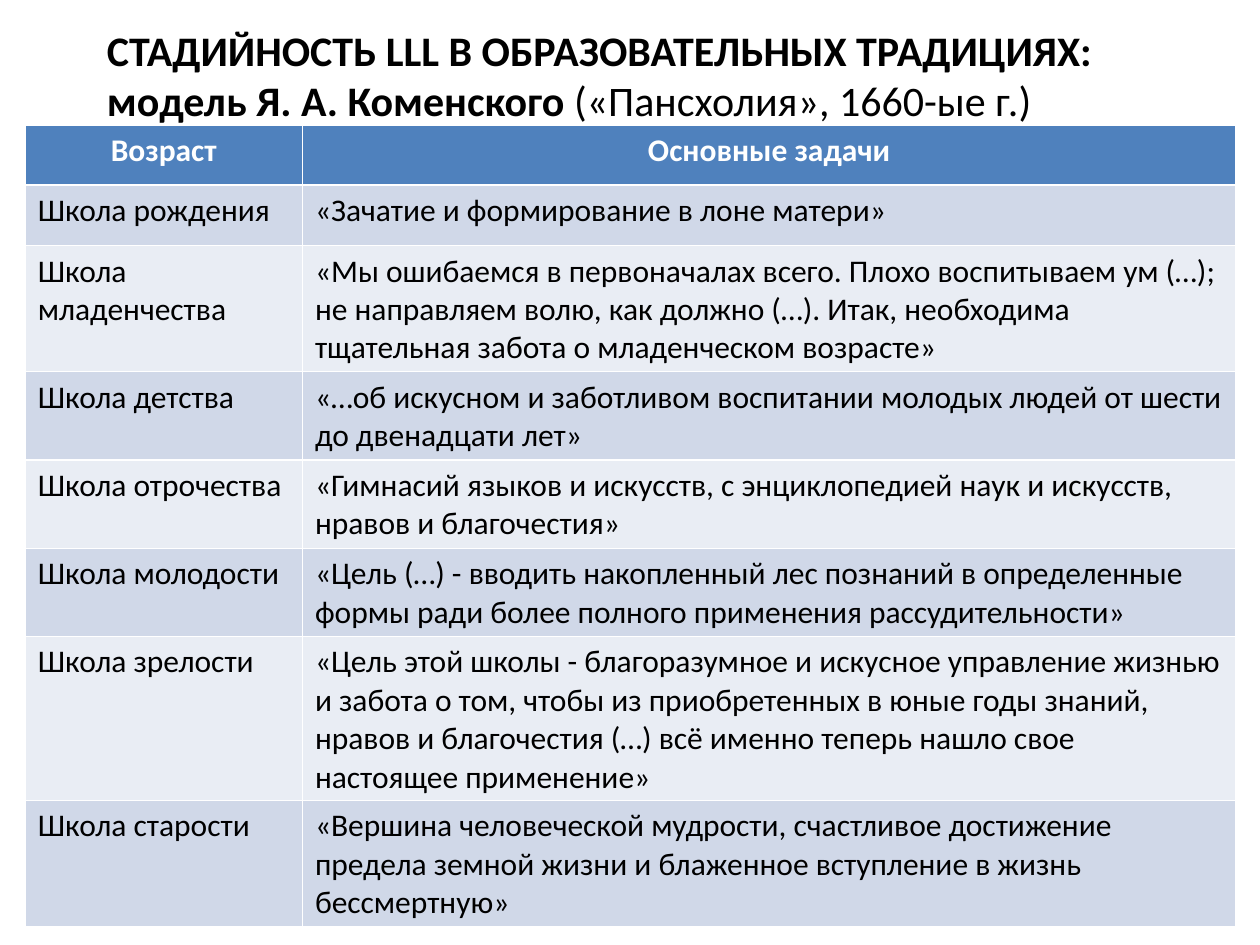
import pptx
import pptx.util
import pptx.dml.color
import pptx.enum.text

Inches = pptx.util.Inches
COLORS = {"text": "000000", "head_text": "FFFFFF", "head": "4F81BD",
          "odd": "D0D8E8", "even": "E9EDF4"}
TITLE = [
    ("СТАДИЙНОСТЬ LLL В ОБРАЗОВАТЕЛЬНЫХ ТРАДИЦИЯХ: модель Я. А. Коменского ", True),
    ("(«Пансхолия», 1660-ые г.)", False),
]
STAGES = [
    ("Возраст", "Основные задачи"),
    ("Школа рождения", "«Зачатие и формирование в лоне матери»"),
    ("Школа младенчества",
     "«Мы ошибаемся в первоначалах всего. Плохо воспитываем ум (…); не направляем волю, "
     "как должно (…). Итак, необходима тщательная забота о младенческом возрасте»"),
    ("Школа детства",
     "«…об искусном и заботливом воспитании молодых людей от шести до двенадцати лет»"),
    ("Школа отрочества",
     "«Гимнасий языков и искусств, с энциклопедией наук и искусств, нравов и благочестия»"),
    ("Школа молодости",
     "«Цель (…) - вводить накопленный лес познаний в определенные формы ради более "
     "полного применения рассудительности»"),
    ("Школа зрелости",
     "«Цель этой школы - благоразумное и искусное управление жизнью и забота о том, чтобы "
     "из приобретенных в юные годы знаний, нравов и благочестия (…) всё именно теперь "
     "нашло свое настоящее применение»"),
    ("Школа старости",
     "«Вершина человеческой мудрости, счастливое достижение предела земной жизни и "
     "блаженное вступление в жизнь бессмертную»"),
]


def rgb(name):
    """Return the named colour as an RGBColor."""
    return pptx.dml.color.RGBColor.from_string(COLORS[name])


def add_run(p, text, size, bold, color):
    """Append a formatted run to a paragraph."""
    r = p.add_run()
    r.text = text
    fmt = {"name": "Calibri", "size": pptx.util.Pt(size), "bold": bold}
    for key, value in fmt.items():
        setattr(r.font, key, value)
    r.font.color.rgb = rgb(color)


def add_title(s, x, y, w, h):
    """Place the two-weight title in the given box."""
    tf = s.shapes.add_textbox(x, y, w, h).text_frame
    fmt = {"word_wrap": True, "vertical_anchor": pptx.enum.text.MSO_ANCHOR.MIDDLE}
    for key, value in fmt.items():
        setattr(tf, key, value)
    for text, bold in TITLE:
        add_run(tf.paragraphs[0], text, 24, bold, "text")


def add_stages(s, x, y, w, row_h, first_w):
    """Place the table of schools in the given box."""
    table = s.shapes.add_table(len(STAGES), 2, x, y, w, row_h * len(STAGES)).table
    for col, width in zip(table.columns, (first_w, w - first_w)):
        col.width = width
    for i, texts in enumerate(STAGES):
        head = i == 0
        fill = "head" if head else ("odd" if i % 2 else "even")
        for j, text in enumerate(texts):
            cell = table.cell(i, j)
            cell.fill.solid()
            cell.fill.fore_color.rgb = rgb(fill)
            p = cell.text_frame.paragraphs[0]
            if head:
                p.alignment = pptx.enum.text.PP_ALIGN.CENTER
            add_run(p, text, 18, head, "head_text" if head else "text")


def main():
    """Build and save the slide."""
    prs = pptx.Presentation()
    prs.slide_width, prs.slide_height = Inches(10), Inches(7.5)
    s = prs.slides.add_slide(prs.slide_layouts[6])
    add_title(s, Inches(0.75), Inches(0.13), Inches(9), Inches(0.93))
    add_stages(s, Inches(0.2), Inches(0.99), Inches(9.61), Inches(0.48), Inches(2.2))
    prs.save("out.pptx")


if __name__ == "__main__":
    main()
